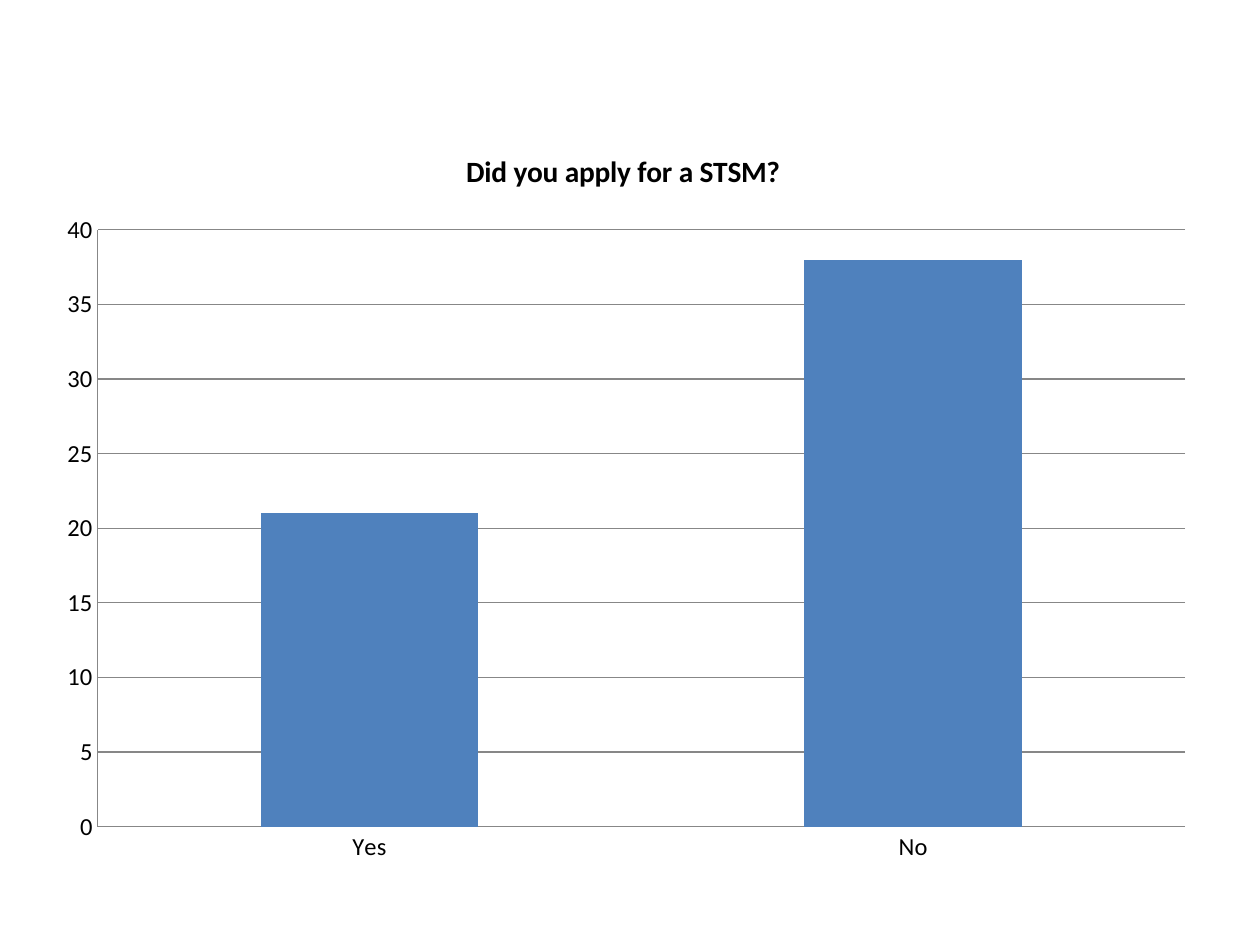
from dataclasses import dataclass

from pptx import Presentation
from pptx.chart.data import CategoryChartData
from pptx.dml.color import RGBColor
from pptx.enum.chart import XL_CHART_TYPE, XL_TICK_MARK
from pptx.util import Pt

COLUMN_CLUSTERED = XL_CHART_TYPE.COLUMN_CLUSTERED
NO_TICK = XL_TICK_MARK.NONE
BLANK_LAYOUT = 6


@dataclass(frozen=True)
class Theme:
    """Fonts, type sizes and colours of the deck."""
    font: str = "Calibri"
    title_size: float = 16.8
    label_size: float = 14
    line_width: float = 0.75
    text: RGBColor = RGBColor(0x00, 0x00, 0x00)
    bar: RGBColor = RGBColor(0x4F, 0x81, 0xBD)
    line: RGBColor = RGBColor(0x87, 0x87, 0x87)


class SlideBuilder:
    """Draws styled elements on the current slide."""

    def __init__(self, slide, theme):
        self.slide = slide
        self.theme = theme

    def style_font(self, font, size, bold=False):
        """Apply the theme font at the given size."""
        font.name = self.theme.font
        font.size = Pt(size)
        font.bold = bold
        font.color.rgb = self.theme.text

    def style_line(self, line):
        """Apply the theme colour and width to an axis or grid line."""
        line.color.rgb = self.theme.line
        line.width = Pt(self.theme.line_width)

    def column_chart(self, title, answers, left, top, width, height, maximum, step):
        """Add a titled column chart of answer counts."""
        data = CategoryChartData()
        data.categories = list(answers)
        data.add_series("Series 1", list(answers.values()))
        chart = self.slide.shapes.add_chart(
            COLUMN_CLUSTERED, Pt(left), Pt(top), Pt(width), Pt(height), data
        ).chart
        self.style_font(chart.font, self.theme.label_size)
        chart.has_legend = False
        chart.has_title = True
        chart.chart_title.include_in_layout = False
        frame = chart.chart_title.text_frame
        frame.text = title
        self.style_font(frame.paragraphs[0].runs[0].font, self.theme.title_size, bold=True)

        plot = chart.plots[0]
        plot.gap_width = 150
        plot.vary_by_categories = False
        fill = plot.series[0].format.fill
        fill.solid()
        fill.fore_color.rgb = self.theme.bar

        for axis in (chart.category_axis, chart.value_axis):
            axis.major_tick_mark = NO_TICK
            axis.minor_tick_mark = NO_TICK
            self.style_line(axis.format.line)
        values = chart.value_axis
        values.minimum_scale = 0
        values.maximum_scale = maximum
        values.major_unit = step
        values.has_major_gridlines = True
        self.style_line(values.major_gridlines.format.line)


def main():
    """Build the survey slide."""
    deck = Presentation()
    deck.slide_width, deck.slide_height = Pt(720), Pt(540)
    slide = deck.slides.add_slide(deck.slide_layouts[BLANK_LAYOUT])
    builder = SlideBuilder(slide, Theme())
    builder.column_chart(
        "Did you apply for a STSM? ", {"Yes": 21, "No": 38},
        left=25.2, top=71.3, width=665.3, height=429.8, maximum=40, step=5,
    )
    deck.save("out.pptx")


if __name__ == "__main__":
    main()
